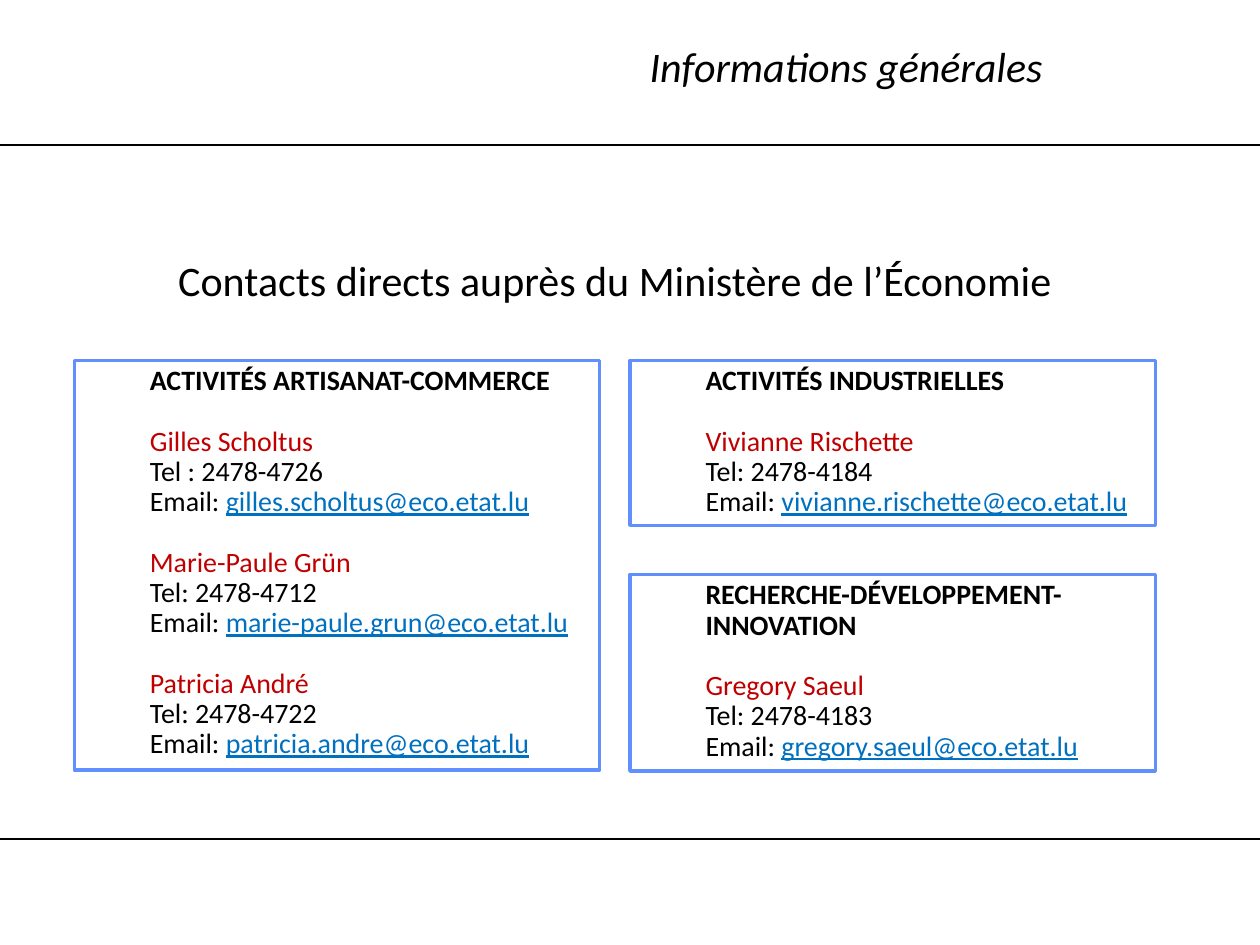
"""Build the contacts slide on a grid of 100 columns by 75 rows."""
from typing import NamedTuple

from lxml.etree import SubElement
from pptx import Presentation
from pptx.dml.color import RGBColor
from pptx.enum.shapes import MSO_CONNECTOR, MSO_SHAPE
from pptx.enum.text import MSO_ANCHOR, PP_ALIGN
from pptx.oxml.ns import qn
from pptx.util import Inches, Pt

COLS, ROWS = 100, 75
INK = {"text": "000000", "name": "C00000", "mail": "0070C0", "edge": "618FFD", "back": "FFFFFF"}
LEFT, WIDE, GAP = 5.9, 41.7, 2.4
GRID = 17.4


class Person(NamedTuple):
    name: str
    tel: str
    mail: str


class Card(NamedTuple):
    col: int
    top: float
    high: float
    head: str
    staff: list[Person]


CARDS = [
    Card(0, 28.6, 32.5, "ACTIVITÉS ARTISANAT-COMMERCE", [
        Person("Gilles Scholtus", "Tel : 2478-4726", "gilles.scholtus@eco.etat.lu"),
        Person("Marie-Paule Grün", "Tel: 2478-4712", "marie-paule.grun@eco.etat.lu"),
        Person("Patricia André", "Tel: 2478-4722", "patricia.andre@eco.etat.lu"),
    ]),
    Card(1, 45.6, 15.6, "RECHERCHE-DÉVELOPPEMENT-INNOVATION", [
        Person("Gregory Saeul", "Tel: 2478-4183", "gregory.saeul@eco.etat.lu"),
    ]),
    Card(1, 28.6, 13.1, "ACTIVITÉS INDUSTRIELLES", [
        Person("Vivianne Rischette", "Tel: 2478-4184", "vivianne.rischette@eco.etat.lu"),
    ]),
]


def box(*cells: float) -> list[int]:
    """Turn grid cells into slide lengths."""
    return [Inches(cell / 10) for cell in cells]


def write(para, text: str, size: int = 16, ink: str = "text", **style) -> None:
    """Add one formatted run to a paragraph."""
    run = para.add_run()
    run.text = text
    font = run.font
    font.name, font.size = "Calibri", Pt(size)
    font.color.rgb = RGBColor.from_string(INK[ink])
    for key, value in style.items():
        setattr(font, key, value)


def line(frame, first: bool = False, before: float = 0):
    """Return a tightly spaced left-aligned paragraph of the frame."""
    para = frame.paragraphs[0] if first else frame.add_paragraph()
    para.alignment = PP_ALIGN.LEFT
    para.line_spacing = 0.9
    para.space_before = Pt(before)
    return para


def rule(slide, row: float) -> None:
    """Draw a thin line across the slide."""
    bar = slide.shapes.add_connector(MSO_CONNECTOR.STRAIGHT, *box(0, row, COLS, row))
    bar.line.color.rgb = RGBColor.from_string(INK["text"])
    bar.line.width = Pt(1)
    SubElement(bar.element.spPr, qn("a:effectLst"))


def draw(slide, card: Card) -> None:
    """Draw a framed card with its heading and people."""
    left = LEFT + card.col * (WIDE + GAP)
    shape = slide.shapes.add_shape(MSO_SHAPE.RECTANGLE, *box(left, card.top, WIDE, card.high))
    shape.shadow.inherit = False
    shape.fill.solid()
    shape.fill.fore_color.rgb = RGBColor.from_string(INK["back"])
    shape.line.color.rgb = RGBColor.from_string(INK["edge"])
    shape.line.width = Pt(2)
    frame = shape.text_frame
    frame.word_wrap = True
    frame.vertical_anchor = MSO_ANCHOR.TOP
    frame.margin_left = Inches(0.6)
    write(line(frame, first=True), card.head, bold=True)
    for person in card.staff:
        write(line(frame, before=GRID), person.name, ink="name")
        write(line(frame), person.tel)
        para = line(frame)
        write(para, "Email: ")
        write(para, person.mail, ink="mail", underline=True)


def main() -> None:
    """Build and save the slide."""
    deck = Presentation()
    deck.slide_width, deck.slide_height = box(COLS, ROWS)
    slide = deck.slides.add_slide(deck.slide_layouts[5])
    for row in (11.5, 66.6):
        rule(slide, row)

    title = slide.shapes.title
    title.left, title.top, title.width, title.height = box(34.3, 1.7, 65.7, 7.1)
    title.text_frame.vertical_anchor = MSO_ANCHOR.MIDDLE
    para = title.text_frame.paragraphs[0]
    para.alignment = PP_ALIGN.CENTER
    write(para, "Informations générales", size=24, italic=True)

    lead = slide.shapes.add_textbox(*box(LEFT, 20.2, 2 * WIDE + GAP, 4.7))
    lead.text_frame.word_wrap = True
    para = line(lead.text_frame, first=True)
    para.alignment = PP_ALIGN.CENTER
    write(para, "Contacts directs auprès du Ministère de l’Économie", size=24)

    for card in CARDS:
        draw(slide, card)
    deck.save("out.pptx")


if __name__ == "__main__":
    main()
